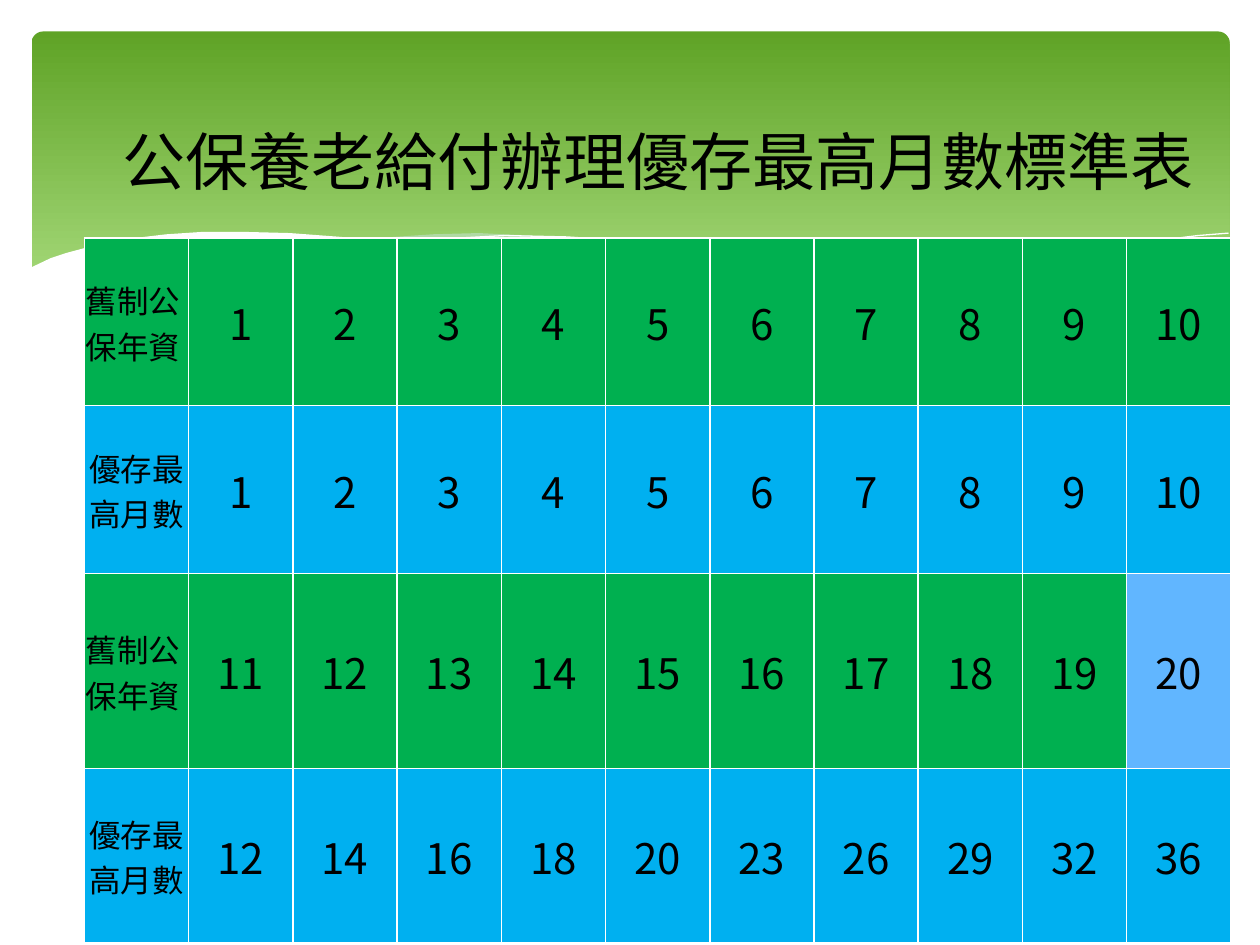
import pptx
import pptx.util
import pptx.dml.color
import pptx.enum.shapes
import pptx.enum.text
import pptx.oxml
import pptx.oxml.ns

Pt = pptx.util.Pt
COLORS = {
    "white": "FFFFFF", "black": "000000", "leaf": "5FA326", "lime": "B2E389",
    "mist": "D6ECFF", "green": "00B050", "blue": "00B0F0", "sky": "61B6FF",
}
FONT = "Noto Sans CJK SC"
ALIGN = pptx.enum.text.PP_ALIGN
NAMESPACE = pptx.oxml.ns.nsdecls("a")

RIGHT_WAVE = [
    (702, 144), (682, 147.2), (652.3, 153.4), (619.9, 160.6), (579.6, 170.6),
    (524.9, 182.2), (475.9, 190.8), (507.6, 195.1), (536.4, 198), (562.3, 199.4),
    (586.1, 200), (614.9, 198.7), (645.8, 194.4), (673.2, 187.9), (702.7, 177.8), (702.7, 144),
]
MIDDLE_WAVE = [
    (643, 196.6), (602.6, 190.8), (558, 182.9), (508.3, 172.8), (452.9, 159.8),
    (409.7, 149.8), (370.1, 142.6), (334.8, 137.5), (302.4, 134.6), (273.6, 133.2),
    (247.7, 133.9), (225.4, 135.4), (205.9, 137.5), (246.2, 143.3), (290.9, 151.9),
    (353.5, 167), (407.5, 178.6), (456.5, 187.9), (500.4, 194.4), (547.9, 199.4),
    (589, 200.2), (624.2, 198.7),
]
LONG_CURVE = [
    (222.5, 140.4), (241.2, 137.5), (261.4, 136.1), (288.7, 134.6), (324, 135.4),
    (367.2, 138.2), (419, 144), (478.8, 153.4), (547.2, 167.8), (625.7, 187.9), (653, 195.8),
]
SHORT_CURVE = [
    (441.4, 185), (470.2, 177.1), (500.4, 169.2), (538.6, 160.6), (580.3, 151.2),
    (623.5, 143.3), (655.2, 138.2), (684.7, 134.6), (702, 133.2),
]
WHITE_WAVE = [
    (703.4, 177.1), (669.6, 188.6), (630, 196.6), (582.5, 199.4), (535.7, 197.3),
    (481, 190.8), (416.9, 180), (321.8, 158.4), (262.8, 145.4), (227.5, 139.7),
    (195.1, 135.4), (165.6, 133.2), (139, 132.5), (115.9, 132.5), (95, 133.9),
    (76.3, 136.1), (61.2, 139), (48.2, 141.8), (37.4, 144.7), (28.8, 147.6),
    (16.6, 153.4), (16.6, 236.9), (703.4, 236.9),
]

YEARS_LABEL = "舊制公保年資"
MONTHS_LABEL = "優存最高月數"
ROWS = [
    [YEARS_LABEL, *range(1, 11)],
    [MONTHS_LABEL, *range(1, 11)],
    [YEARS_LABEL, *range(11, 21)],
    [MONTHS_LABEL, 12, 14, 16, 18, 20, 23, 26, 29, 32, 36],
]
ROW_HEIGHTS = [95.76, 95.76, 111.6, 99.36]


def rgb(name):
    return pptx.dml.color.RGBColor.from_string(COLORS[name])


def write_text(text_frame, text, size, align=ALIGN.CENTER, color="black", shadow=False):
    text_frame.word_wrap = True
    paragraph = text_frame.paragraphs[0]
    paragraph.alignment = align
    run = paragraph.add_run()
    run.text = text
    run.font.size = Pt(size)
    run.font.bold = False
    run.font.color.rgb = rgb(color)
    if shadow:
        run.font._element.append(pptx.oxml.parse_xml(
            f'<a:effectLst {NAMESPACE}><a:outerShdw blurRad="38100" dist="25400" dir="2700000">'
            '<a:srgbClr val="000000"><a:alpha val="43000"/></a:srgbClr>'
            '</a:outerShdw></a:effectLst>'))
    run.font.name = FONT
    latin = run.font._element.find(pptx.oxml.ns.qn("a:latin"))
    latin.addnext(pptx.oxml.parse_xml(f'<a:ea {NAMESPACE} typeface="{FONT}"/>'))


class SlideBuilder:
    def __init__(self, presentation):
        self.slide = presentation.slides.add_slide(presentation.slide_layouts[5])
        self.shapes = self.slide.shapes

    def banner(self, left, top, width, height):
        shape = self.shapes.add_shape(
            pptx.enum.shapes.MSO_SHAPE.ROUNDED_RECTANGLE,
            Pt(left), Pt(top), Pt(width), Pt(height))
        shape.adjustments[0] = 0.034
        shape.shadow.inherit = False
        shape.line.fill.background()
        shape.fill.gradient()
        shape.fill.gradient_angle = 270
        for stop, color, position in zip(shape.fill.gradient_stops, ("leaf", "lime"), (0, 0.9)):
            stop.color.rgb = rgb(color)
            stop.position = position

    def outline(self, points, closed):
        scaled = [(Pt(x), Pt(y)) for x, y in points]
        builder = self.shapes.build_freeform(*scaled[0])
        builder.add_line_segments(scaled[1:], close=closed)
        shape = builder.convert_to_shape()
        shape.shadow.inherit = False
        return shape

    def wave(self, points, color, opacity=100):
        shape = self.outline(points, closed=True)
        shape.line.fill.background()
        shape.fill.solid()
        shape.fill.fore_color.rgb = rgb(color)
        if opacity < 100:
            fill_color = shape._element.spPr.find(".//" + pptx.oxml.ns.qn("a:srgbClr"))
            fill_color.append(pptx.oxml.parse_xml(
                f'<a:alpha {NAMESPACE} val="{opacity * 1000}"/>'))

    def curve(self, points, color):
        shape = self.outline(points, closed=False)
        shape.fill.background()
        shape.line.color.rgb = rgb(color)
        shape.line.width = Pt(0)

    def title(self, text, left, top, width, height):
        shape = self.shapes.title
        shape.left, shape.top, shape.width, shape.height = map(Pt, (left, top, width, height))
        shape.text_frame.vertical_anchor = pptx.enum.text.MSO_ANCHOR.MIDDLE
        write_text(shape.text_frame, text, size=36, shadow=True)
        self.shapes._spTree.append(shape._element)

    def cell(self, cell, text, color, size, align):
        cell.fill.solid()
        cell.fill.fore_color.rgb = rgb(color)
        cell.vertical_anchor = pptx.enum.text.MSO_ANCHOR.MIDDLE
        cell.margin_left = cell.margin_right = cell.margin_top = Pt(0.72)
        cell.margin_bottom = Pt(0)
        write_text(cell.text_frame, text, size, align)
        properties = cell._tc.get_or_add_tcPr()
        for index, side in enumerate(("lnL", "lnR", "lnT", "lnB")):
            properties.insert(index, pptx.oxml.parse_xml(
                f'<a:{side} {NAMESPACE} w="12700"><a:solidFill>'
                f'<a:srgbClr val="{COLORS["white"]}"/></a:solidFill></a:{side}>'))

    def table(self, rows, left, top, width, heights):
        count = len(rows[0])
        table = self.shapes.add_table(
            len(rows), count, Pt(left), Pt(top), Pt(width), Pt(sum(heights))).table
        table.first_row = table.horz_banding = False
        for column in table.columns:
            column.width = Pt(width / count)
        for row_index, (values, height) in enumerate(zip(rows, heights)):
            table.rows[row_index].height = Pt(height)
            is_years = values[0] == YEARS_LABEL
            for column_index, value in enumerate(values):
                is_label = column_index == 0
                color = "green" if is_years else "blue"
                if is_years and value == 20:
                    color = "sky"
                self.cell(
                    table.cell(row_index, column_index), str(value), color,
                    size=18 if is_label else 24,
                    align=ALIGN.LEFT if is_label and is_years else ALIGN.CENTER)


def main():
    presentation = pptx.Presentation()
    presentation.slide_width, presentation.slide_height = Pt(720), Pt(540)
    builder = SlideBuilder(presentation)
    builder.banner(18, 18, 684.7, 194.4)
    builder.wave(RIGHT_WAVE, "mist", opacity=29)
    builder.wave(MIDDLE_WAVE, "mist", opacity=40)
    builder.curve(LONG_CURVE, "white")
    builder.curve(SHORT_CURVE, "white")
    builder.wave(WHITE_WAVE, "white")
    builder.title("公保養老給付辦理優存最高月數標準表", 55.44, 60.48, 641.5, 62.64)
    builder.table(ROWS, 48.24, 136.08, 655.2, ROW_HEIGHTS)
    presentation.save("out.pptx")


if __name__ == "__main__":
    main()
